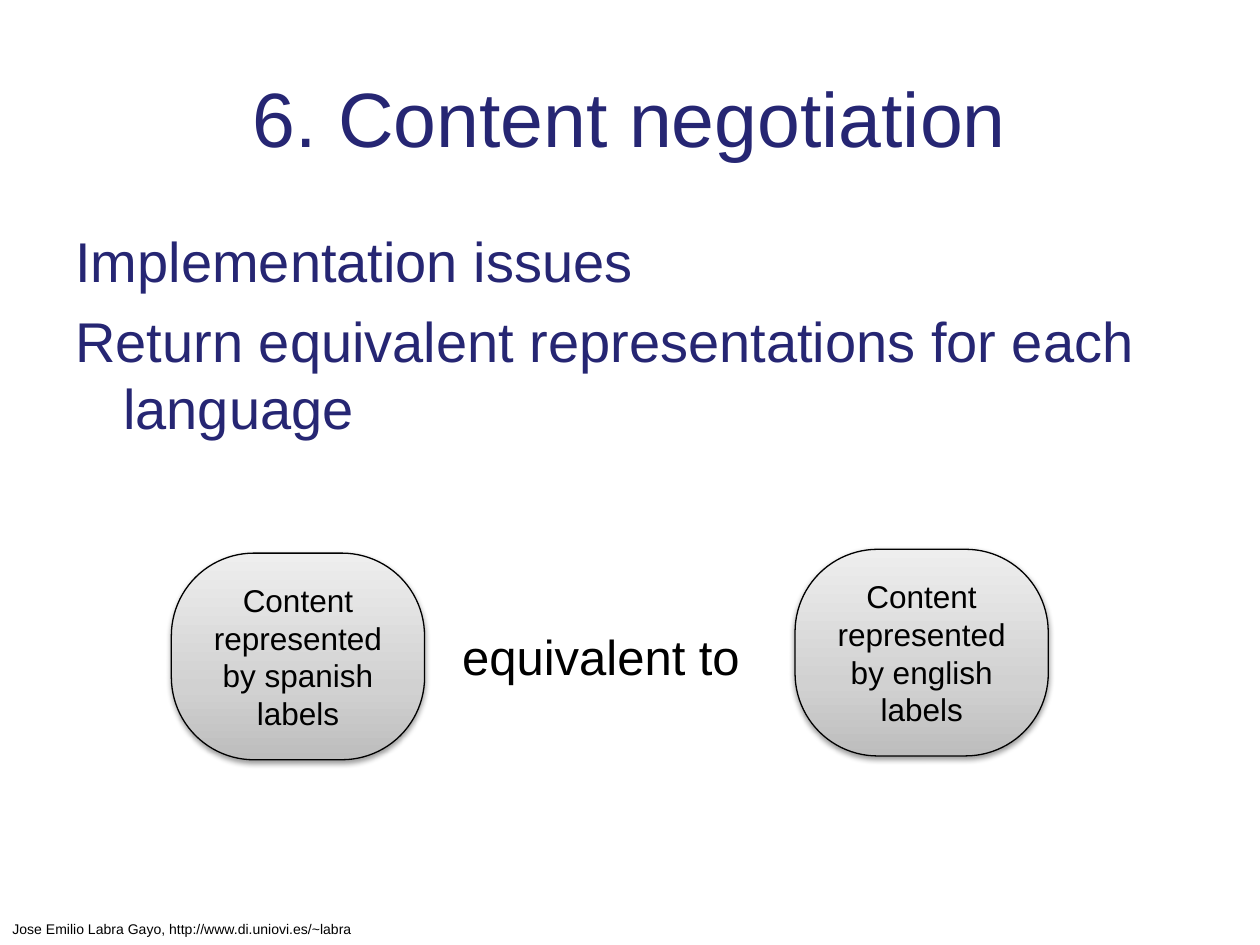
import copy
import pptx
import pptx.dml.color
import pptx.enum.shapes
import pptx.enum.text
import pptx.oxml
import pptx.oxml.ns
import pptx.util
from pptx.util import Inches

RGB = pptx.dml.color.RGBColor
NAVY = RGB(0x26, 0x26, 0x73)
BLACK = RGB(0, 0, 0)
WHITE = RGB(255, 255, 255)
GREYS = [(0, RGB(0xBD, 0xBD, 0xBD)), (0.35, RGB(0xD1, 0xD1, 0xD1)),
         (1, RGB(0xEE, 0xEE, 0xEE))]
ALIGN = pptx.enum.text.PP_ALIGN
ANCHOR = pptx.enum.text.MSO_ANCHOR
qn = pptx.oxml.ns.qn
SHADOW = (
    f'<a:outerShdw {pptx.oxml.ns.nsdecls("a")} blurRad="39370" dist="20320" '
    'dir="5400000" rotWithShape="0"><a:srgbClr val="000000">'
    '<a:alpha val="38000"/></a:srgbClr></a:outerShdw>')


def style(para, size, color, align=ALIGN.LEFT):
    para.alignment = align
    para.font.name = "Arial"
    para.font.size = pptx.util.Pt(size)
    para.font.color.rgb = color


def add_title(slide, box, text):
    title = slide.shapes.title
    title.left, title.top, title.width, title.height = box
    frame = title.text_frame
    frame.text = text
    frame.vertical_anchor = ANCHOR.MIDDLE
    style(frame.paragraphs[0], 44, NAVY, ALIGN.CENTER)


def add_body(slide, box, lines):
    frame = slide.shapes.add_textbox(*box).text_frame
    frame.word_wrap = True
    frame.text = "\n".join(lines)
    for i, para in enumerate(frame.paragraphs):
        # Hanging indent
        props = para._p.get_or_add_pPr()
        props.set("marL", str(Inches(0.38)))
        props.set("indent", str(-Inches(0.38)))
        if i:
            para.space_before = pptx.util.Pt(7)
        style(para, 32, NAVY)


def add_label(slide, box, text, size):
    frame = slide.shapes.add_textbox(*box).text_frame
    frame.word_wrap = False
    frame.auto_size = pptx.enum.text.MSO_AUTO_SIZE.SHAPE_TO_FIT_TEXT
    frame.text = text
    style(frame.paragraphs[0], size, BLACK)


def add_node(slide, box, text):
    node = slide.shapes.add_shape(
        pptx.enum.shapes.MSO_SHAPE.ROUNDED_RECTANGLE, *box)
    node.adjustments[0] = 0.4

    # Grey gradient, darkest at the bottom
    node.fill.gradient()
    node.fill.gradient_angle = 90
    stops = node._element.spPr.find(".//" + qn("a:gsLst"))
    stops.append(copy.deepcopy(stops[0]))
    for stop, (pos, color) in zip(node.fill.gradient_stops, GREYS):
        stop.position = pos
        stop.color.rgb = color
    node.line.color.rgb = BLACK
    node.line.width = pptx.util.Pt(0.75)

    # Soft shadow below
    node.shadow.inherit = False
    effects = node._element.spPr.find(qn("a:effectLst"))
    effects.append(pptx.oxml.parse_xml(SHADOW))

    frame = node.text_frame
    frame.word_wrap = True
    frame.vertical_anchor = ANCHOR.MIDDLE
    frame.text = text
    style(frame.paragraphs[0], 18, BLACK, ALIGN.CENTER)


def add_pair(slide, left, top):
    """Two nodes with the relation between them."""
    wide, high = Inches(2.01), Inches(1.64)
    add_node(slide, (left, top + Inches(0.03), wide, high),
             "Content represented by spanish labels")
    add_node(slide, (left + Inches(4.95), top, wide, high),
             "Content represented by english labels")
    add_label(slide, (left + Inches(2.21), top + Inches(0.56),
                      Inches(2.43), Inches(0.57)), "equivalent to", 28)


def main():
    deck = pptx.Presentation()
    deck.slide_width, deck.slide_height = Inches(10), Inches(7.5)
    slide = deck.slides.add_slide(deck.slide_layouts[5])
    slide.background.fill.solid()
    slide.background.fill.fore_color.rgb = WHITE

    # Footer
    add_label(slide, (0, Inches(7.26), Inches(2.93), Inches(0.24)),
              "Jose Emilio Labra Gayo, http://www.di.uniovi.es/~labra", 8)
    # Heading and body
    add_title(slide, (Inches(0.5), Inches(0.3), Inches(9), Inches(1.25)),
              "6. Content negotiation")
    add_body(slide, (Inches(0.5), Inches(1.75), Inches(8.81), Inches(2.81)),
             ["Implementation issues",
              "Return equivalent representations for each language"])
    # Diagram
    add_pair(slide, Inches(1.36), Inches(4.36))
    deck.save("out.pptx")


if __name__ == "__main__":
    main()
